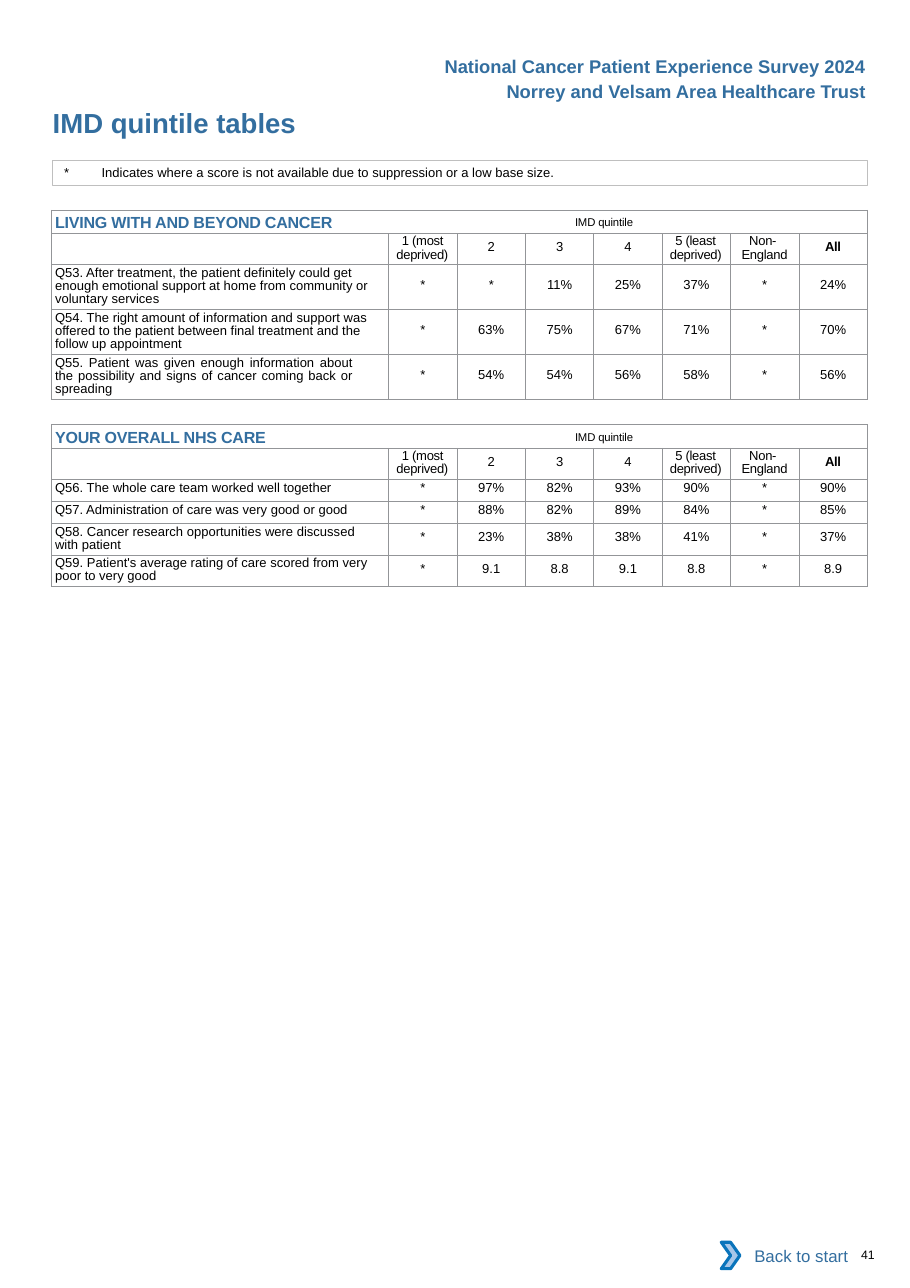
from lxml.etree import SubElement
from pptx import Presentation
from pptx.dml.color import RGBColor
from pptx.enum.shapes import MSO_SHAPE
from pptx.enum.text import MSO_ANCHOR, PP_ALIGN
from pptx.oxml import parse_xml
from pptx.oxml.ns import nsdecls, qn
from pptx.util import Pt

THEME = {
    "font": "Arial",
    "blue": RGBColor.from_string("336E9F"),
    "black": RGBColor.from_string("000000"),
    "white": RGBColor.from_string("FFFFFF"),
    "note_line": RGBColor.from_string("BFBFBF"),
    "chevron_fill": RGBColor.from_string("A8C7E9"),
    "chevron_line": RGBColor.from_string("0A74BB"),
    "grid": "939598",
    "title": 18,
    "banner": 12,
    "link": 11,
    "section": 10.5,
    "raised": 12.8,
    "body": 8.5,
    "page_number": 8,
}


def write(frame, runs, align=None, leading=None, tab=None, insets=(0, 0, 0, 0), **indents):
    frame.word_wrap = True
    sides = ("margin_left", "margin_top", "margin_right", "margin_bottom")
    for side, inset in zip(sides, insets):
        setattr(frame, side, Pt(inset))
    para = frame.paragraphs[0]
    para.alignment = align
    if leading:
        para.line_spacing = Pt(leading)
    properties = para._p.get_or_add_pPr()
    for name, value in indents.items():
        properties.set(name, str(Pt(value)))
    if tab:
        stops = SubElement(properties, qn("a:tabLst"))
        SubElement(stops, qn("a:tab"), pos=str(Pt(tab)), algn="l")
    for text, size, color, bold, extras in runs:
        span = para.add_run()
        span.text = text
        span.font.color.rgb = THEME[color]
        values = {"name": THEME["font"], "size": Pt(THEME[size]), "bold": bold}
        for name, value in values.items():
            setattr(span.font, name, value)
        for name, value in extras.items():
            span._r.get_or_add_rPr().set(name, value)


def frame_cell(cell):
    cell.fill.background()
    properties = cell._tc.get_or_add_tcPr()
    for index, edge in enumerate(("lnL", "lnR", "lnT", "lnB")):
        properties.insert(index, parse_xml(
            f'<a:{edge} {nsdecls("a")} w="{Pt(0.5)}"><a:solidFill>'
            f'<a:srgbClr val="{THEME["grid"]}"/></a:solidFill></a:{edge}>'))
    for side in ("margin_left", "margin_top", "margin_right", "margin_bottom"):
        setattr(cell, side, 0)
    SubElement(cell.text_frame.paragraphs[0]._p, qn("a:endParaRPr"), sz="850")


deck = Presentation()
deck.slide_width, deck.slide_height = Pt(594.72), Pt(841.68)
page = deck.slides.add_slide(deck.slide_layouts[6])

wide = (7.2, 3.6, 7.2, 3.6)
labels = [
    ((555.5, 815.4, 36.7, 9.4), "41", "page_number", "black", False, {"marL": 7.2}),
    ((33.8, 69.1, 324, 21.6), "IMD quintile tables", "title", "blue", True,
     {"marL": 0.7}),
    ((321.8, 49, 251.3, 21.6), "Norrey and Velsam Area Healthcare Trust", "banner", "blue", True,
     {"align": PP_ALIGN.RIGHT, "insets": wide}),
    ((282.2, 32.8, 290.9, 21.6), "National Cancer Patient Experience Survey 2024", "banner", "blue",
     True, {"align": PP_ALIGN.RIGHT, "insets": wide}),
]
for place, text, size, color, bold, layout in labels:
    box = page.shapes.add_textbox(*map(Pt, place))
    write(box.text_frame, [(text, size, color, bold, {})], **layout)

headers = [
    ("1 (most deprived)", 5, 3.6),
    ("2", None, None),
    ("3", None, None),
    ("4", None, None),
    ("5 (least deprived)", 5, 3.6),
    ("Non- England", 7.2, 5),
    ("All", None, None),
]
sections = [
    ("LIVING WITH AND BEYOND CANCER", 137.3, [
        (29.4, "Q53. After treatment, the patient definitely could get enough emotional support "
               "at home from community or voluntary services",
         "* * 11% 25% 37% * 24%"),
        (29.4, "Q54. The right amount of information and support was offered to the patient "
               "between final treatment and the follow up appointment",
         "* 63% 75% 67% 71% * 70%"),
        (29.4, "Q55. Patient was given enough information about the possibility and signs of "
               "cancer coming back or spreading",
         "* 54% 54% 56% 58% * 56%"),
    ]),
    ("YOUR OVERALL NHS CARE", 277.5, [
        (14.4, "Q56. The whole care team worked well together", "* 97% 82% 93% 90% * 90%"),
        (14.4, "Q57. Administration of care was very good or good", "* 88% 82% 89% 84% * 85%"),
        (20.7, "Q58. Cancer research opportunities were discussed with patient",
         "* 23% 38% 38% 41% * 37%"),
        (20.7, "Q59. Patient's average rating of care scored from very poor to very good",
         "* 9.1 8.8 9.1 8.8 * 8.9"),
    ]),
]
value_tops = {29.4: 8.6, 20.7: 4.2, 14.4: 1}
column_widths = [220.3] + [44.7] * 7

for heading, top, questions in sections:
    heights = [15.4, 20.3] + [height for height, _, _ in questions]
    table = page.shapes.add_table(len(heights), len(column_widths), Pt(33.8), Pt(top),
                                  Pt(sum(column_widths)), Pt(sum(heights))).table
    table.first_row = table.horz_banding = False
    for column, width in zip(table.columns, column_widths):
        column.width = Pt(width)
    for row, height in zip(table.rows, heights):
        row.height = Pt(height)
        for cell in row.cells:
            frame_cell(cell)

    banner = table.cell(0, 0)
    banner.merge(table.cell(0, 7))
    banner.vertical_anchor = MSO_ANCHOR.MIDDLE
    write(banner.text_frame,
          [(heading + "\t", "section", "blue", True, {"spc": "-10"}),
           ("IMD quintile", "raised", "black", False, {"baseline": "10000", "spc": "-10"})],
          marL=2.2, tab=339.8)

    for column, (text, left, first) in enumerate(headers, 1):
        cell = table.cell(1, column)
        runs = [(text, "body", "black", text == "All", {"spc": "-20"})]
        if left:
            cell.margin_top = Pt(1.3)
            write(cell.text_frame, runs, leading=8.6, marL=left, indent=first)
        else:
            cell.margin_top = Pt(4)
            write(cell.text_frame, runs, align=PP_ALIGN.CENTER)

    for row, (height, question, scores) in enumerate(questions, 2):
        cell = table.cell(row, 0)
        single = height == 14.4
        spread = question.startswith("Q55")
        cell.margin_top = Pt(1 if single else 1.6)
        write(cell.text_frame, [(question, "body", "black", False, {})],
              align=PP_ALIGN.JUSTIFY if spread else None,
              leading=None if single else 8.6, marL=2.2, marR=23.5 if spread else 11)
        for column, score in enumerate(scores.split(), 1):
            cell = table.cell(row, column)
            cell.margin_top = Pt(value_tops[height])
            write(cell.text_frame, [(score, "body", "black", False, {})], align=PP_ALIGN.CENTER)

panels = [
    (MSO_SHAPE.RECTANGLE, (34, 105.1, 533, 15.8), None, "note_line", 0.5),
    (MSO_SHAPE.RECTANGLE, (476.4, 805.3, 85, 30.2), "white", None, 0),
    (MSO_SHAPE.CHEVRON, (471.4, 811.8, 12.2, 17.3), "chevron_fill", "chevron_line", 2),
]
drawn = []
for kind, place, fill, line, weight in panels:
    panel = page.shapes.add_shape(kind, *map(Pt, place))
    panel.shadow.inherit = False
    if fill:
        panel.fill.solid()
        panel.fill.fore_color.rgb = THEME[fill]
    else:
        panel.fill.background()
    if line:
        panel.line.color.rgb = THEME[line]
        panel.line.width = Pt(weight)
    else:
        panel.line.fill.background()
    drawn.append(panel)

note, link, chevron = drawn
note.text_frame.vertical_anchor = MSO_ANCHOR.TOP
write(note.text_frame,
      [("*\tIndicates where a score is not available due to suppression or a low base size.",
        "body", "black", False, {})],
      align=PP_ALIGN.LEFT, insets=(0, 2.5, 0, 2.5), marL=7.9, tab=24.5)
write(link.text_frame, [("Back to start", "link", "blue", False, {})],
      align=PP_ALIGN.RIGHT, insets=wide)

deck.save("out.pptx")
